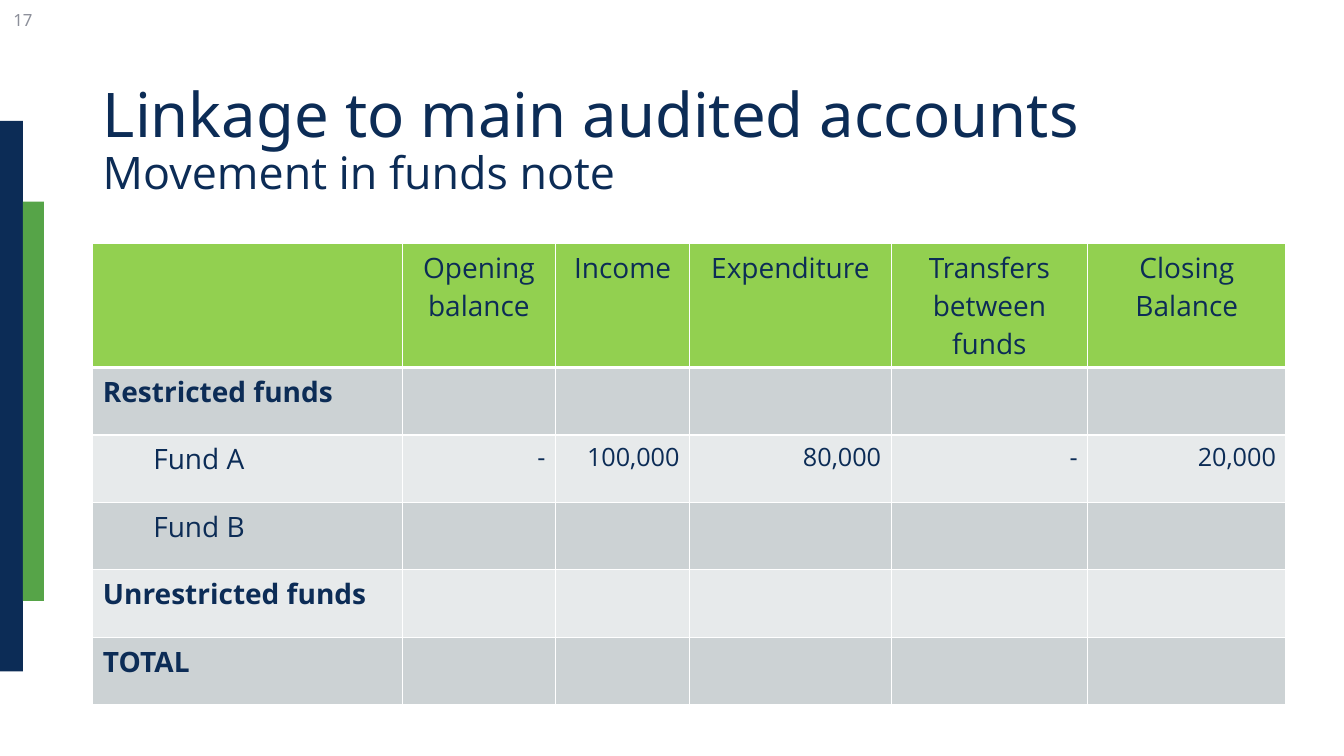
import pptx
import pptx.dml.color
import pptx.enum.shapes
import pptx.enum.text
import pptx.oxml
import pptx.oxml.ns
import pptx.util
from pptx.util import Cm

ALIGN = pptx.enum.text.PP_ALIGN
NAVY, GREEN, LIME, GREY = "0C2C56", "56A448", "92D050", "8C8F9A"
BANDS = ("CCD2D4", "E7EAEB")
COLUMN_WIDTHS = (7.8, 3.86, 3.38, 5.08, 4.95, 5)
HEADER_HEIGHT, ROW_HEIGHT = 3.12, 1.7
HEADINGS = ("", "Opening balance", "Income", "Expenditure",
            "Transfers between funds", "Closing Balance")
FUNDS = (
    ("Restricted funds",),
    ("Fund A", "-", "100,000", "80,000", "-", "20,000"),
    ("Fund B",),
    ("Unrestricted funds",),
    ("TOTAL",),
)


def rgb(value):
    """Turn a hex string into a colour."""
    return pptx.dml.color.RGBColor.from_string(value)


def set_font(font, size, name="Open Sans", color=NAVY, bold=False):
    """Set the look of a paragraph or span."""
    font.size = pptx.util.Pt(size)
    font.name = name
    font.bold = bold
    font.color.rgb = rgb(color)


def add_bar(page, left, top, width, height, color):
    """Add a plain coloured bar."""
    bar = page.shapes.add_shape(
        pptx.enum.shapes.MSO_SHAPE.RECTANGLE, Cm(left), Cm(top), Cm(width), Cm(height))
    bar.shadow.inherit = False
    bar.fill.solid()
    bar.fill.fore_color.rgb = rgb(color)
    bar.line.fill.background()


def add_text_box(page, left, top, width, height):
    """Add a wrapping, vertically centred box and return its paragraph."""
    box = page.shapes.add_textbox(Cm(left), Cm(top), Cm(width), Cm(height))
    box.text_frame.word_wrap = True
    box.text_frame.vertical_anchor = pptx.enum.text.MSO_ANCHOR.MIDDLE
    return box.text_frame.paragraphs[0]


def add_title(page, title, subtitle):
    """Add the title with its smaller second line."""
    para = add_text_box(page, 2.34, 1.73, 29.21, 3.68)
    para.line_spacing = 0.9
    span = para.add_run()
    span.text = title
    set_font(span.font, 44, "Noto Sans")
    para.add_line_break()
    span = para.add_run()
    span.text = subtitle
    set_font(span.font, 32)


def add_page_number(page, number):
    """Add the page number in the top corner."""
    para = add_text_box(page, 0, 0, 1.07, 1.02)
    para.text = number
    para.alignment = ALIGN.RIGHT
    set_font(para.font, 12, "Noto Sans", GREY)


def style_cell(cell, fill, top=1, bottom=1):
    """Give a cell white borders, in points, and a fill."""
    properties = cell._tc.get_or_add_tcPr()
    for side, width in (("L", 1), ("R", 1), ("T", top), ("B", bottom)):
        properties.append(pptx.oxml.parse_xml(
            f'<a:ln{side} {pptx.oxml.ns.nsdecls("a")} w="{pptx.util.Pt(width)}">'
            '<a:solidFill><a:srgbClr val="FFFFFF"/></a:solidFill>'
            f'</a:ln{side}>'))
    cell.fill.solid()
    cell.fill.fore_color.rgb = rgb(fill)


def write_cell(cell, text, size=20, bold=False, align=ALIGN.LEFT, indented=False):
    """Write the text of a cell."""
    para = cell.text_frame.paragraphs[0]
    para.text = text
    para.alignment = align
    if indented:
        para.level = 1
        properties = para._p.get_or_add_pPr()
        properties.set("marL", str(Cm(1.27)))
        properties.set("indent", "0")
    set_font(para.font, size, bold=bold)


def add_funds_table(page):
    """Add the table of movements in funds."""
    row_heights = [HEADER_HEIGHT] + [ROW_HEIGHT] * len(FUNDS)
    table = page.shapes.add_table(
        len(row_heights), len(HEADINGS), Cm(2.34), Cm(6.14),
        Cm(sum(COLUMN_WIDTHS)), Cm(sum(row_heights))).table
    table.horz_banding = False
    for column, width in zip(table.columns, COLUMN_WIDTHS):
        column.width = Cm(width)
    for row, height in zip(table.rows, row_heights):
        row.height = Cm(height)
    for column, heading in enumerate(HEADINGS):
        cell = table.cell(0, column)
        style_cell(cell, LIME, bottom=3)
        write_cell(cell, heading, align=ALIGN.CENTER)
    for row, (label, *amounts) in enumerate(FUNDS, 1):
        for column in range(len(HEADINGS)):
            style_cell(table.cell(row, column), BANDS[(row - 1) % 2],
                       top=3 if row == 1 else 1)
        is_fund = label.startswith("Fund ")
        write_cell(table.cell(row, 0), label, bold=not is_fund, indented=is_fund)
        for column, amount in enumerate(amounts, 1):
            write_cell(table.cell(row, column), amount, 18, align=ALIGN.RIGHT)


def main():
    """Build the deck and save it."""
    deck = pptx.Presentation()
    deck.slide_width, deck.slide_height = Cm(33.87), Cm(19.05)
    page = deck.slides.add_slide(deck.slide_layouts[6])
    add_bar(page, 0, 3.05, 0.58, 13.87, NAVY)
    add_bar(page, 0.58, 5.08, 0.53, 10.06, GREEN)
    add_title(page, "Linkage to main audited accounts", "Movement in funds note")
    add_page_number(page, "17")
    add_funds_table(page)
    deck.save("out.pptx")


if __name__ == "__main__":
    main()
